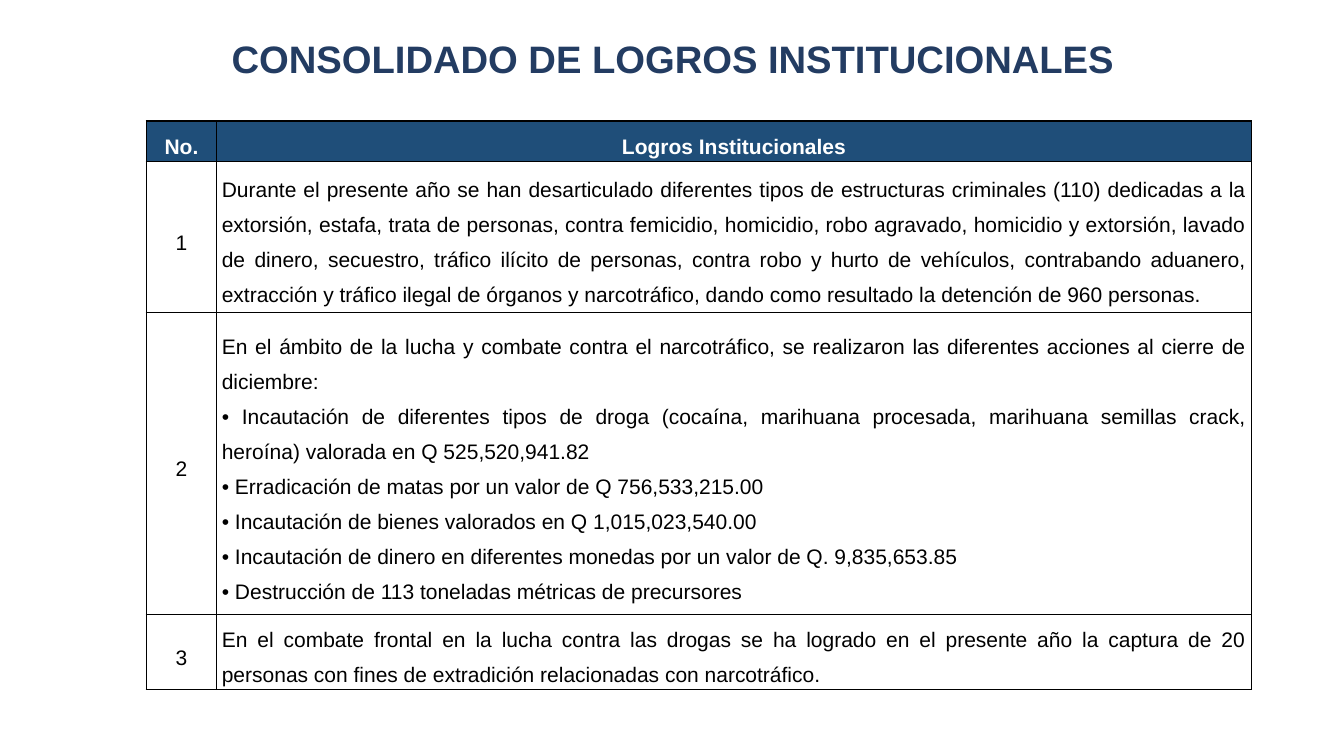
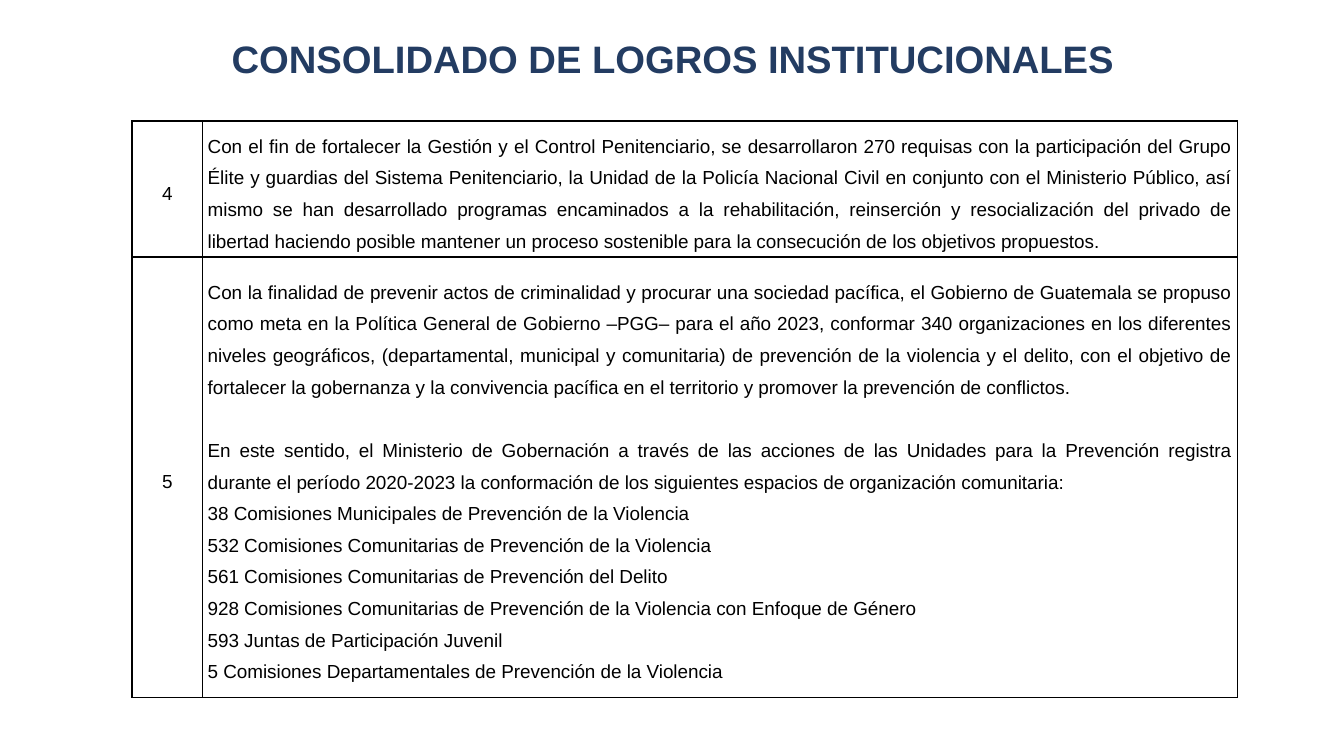
from dataclasses import dataclass

from pptx import Presentation
from pptx.dml.color import RGBColor
from pptx.enum.text import MSO_ANCHOR as ANCHOR, MSO_AUTO_SIZE as AUTO, PP_ALIGN as ALIGN
from pptx.oxml import parse_xml
from pptx.oxml.ns import nsdecls
from pptx.util import Inches, Pt


# Colours and type sizes
@dataclass(frozen=True)
class Theme:
    font: str = "Arial"
    title_color: str = "233C62"
    header_fill: str = "1F4E79"
    header_text: str = "FFFFFF"
    text: str = "000000"
    border: str = "000000"
    border_width: float = 1
    title_size: float = 27.3
    large_size: float = 15
    small_size: float = 13.5
    cell_spacing: float = 1.5
    block_gap: float = 23


class Deck:
    def __init__(self, theme):
        self.theme = theme
        self.prs = Presentation()
        self.prs.slide_width, self.prs.slide_height = Inches(13.33), Inches(7.5)
        self.s = None

    def add_run(self, p, text, size, color, bold=False):
        r = p.add_run()
        r.text = text
        f = r.font
        f.name, f.size, f.bold = self.theme.font, Pt(size), bold
        f.color.rgb = RGBColor.from_string(color)

    def add_slide(self, title):
        self.s = self.prs.slides.add_slide(self.prs.slide_layouts[5])
        sp = self.s.shapes.title
        sp.left, sp.top = Inches(2.04), Inches(0.24)
        sp.width, sp.height = Inches(9.26), Inches(0.73)
        tf = sp.text_frame
        tf.word_wrap, tf.auto_size = True, AUTO.NONE
        tf.vertical_anchor = ANCHOR.MIDDLE
        p = tf.paragraphs[0]
        p.alignment, p.line_spacing = ALIGN.CENTER, 0.9
        self.add_run(p, title, self.theme.title_size, self.theme.title_color, True)

    def add_borders(self, cell):
        tc_pr = cell._tc.get_or_add_tcPr()
        for side in "LRTB":
            tc_pr.append(parse_xml(
                f'<a:ln{side} {nsdecls("a")} w="{Pt(self.theme.border_width)}">'
                f'<a:solidFill><a:srgbClr val="{self.theme.border}"/></a:solidFill>'
                f'</a:ln{side}>'))

    def fill_cell(self, cell, blocks, size, align, header=False):
        """Each block is a list of paragraphs; a gap separates the blocks."""
        th = self.theme
        cell.margin_left = cell.margin_right = Inches(0.05)
        cell.margin_top = cell.margin_bottom = 0
        cell.vertical_anchor = ANCHOR.MIDDLE
        self.add_borders(cell)
        if header:
            cell.fill.solid()
            cell.fill.fore_color.rgb = RGBColor.from_string(th.header_fill)
        else:
            cell.fill.background()
        tf = cell.text_frame
        for b, block in enumerate(blocks):
            for i, text in enumerate(block):
                first = b == 0 and i == 0
                p = tf.paragraphs[0] if first else tf.add_paragraph()
                p.alignment, p.line_spacing = align, th.cell_spacing
                if b > 0 and i == 0:
                    p.space_before = Pt(th.block_gap)
                self.add_run(p, text, size, th.header_text if header else th.text, header)

    def add_table(self, left, heights, rows, size, header=None):
        all_rows = ([(header[0], [[header[1]]])] if header else []) + rows
        widths = (0.7, 10.26)
        table = self.s.shapes.add_table(
            len(all_rows), len(widths), Inches(left), Inches(1.2),
            Inches(sum(widths)), Inches(sum(heights))).table
        table.first_row, table.horz_banding = bool(header), False
        for col, width in zip(table.columns, widths):
            col.width = Inches(width)
        for i, (height, (number, blocks)) in enumerate(zip(heights, all_rows)):
            table.rows[i].height = Inches(height)
            is_header = bool(header) and i == 0
            self.fill_cell(table.cell(i, 0), [[number]], size, ALIGN.CENTER, is_header)
            self.fill_cell(table.cell(i, 1), blocks, size,
                           ALIGN.CENTER if is_header else ALIGN.JUSTIFY, is_header)


TITLE = "CONSOLIDADO DE LOGROS INSTITUCIONALES"

# Achievements 1 to 3
SECURITY = [
    ("1", [[
        "Durante el presente año se han desarticulado diferentes tipos de estructuras "
        "criminales (110) dedicadas a la extorsión, estafa, trata de personas, contra "
        "femicidio, homicidio, robo agravado, homicidio y extorsión, lavado de dinero, "
        "secuestro, tráfico ilícito de personas, contra robo y hurto de vehículos, "
        "contrabando aduanero, extracción y tráfico ilegal de órganos y narcotráfico, "
        "dando como resultado la detención de 960 personas."]]),
    ("2", [[
        "En el ámbito de la lucha y combate contra el narcotráfico, se realizaron las "
        "diferentes acciones al cierre de diciembre:",
        "• Incautación de diferentes tipos de droga (cocaína, marihuana procesada, "
        "marihuana semillas crack, heroína) valorada en Q 525,520,941.82",
        "• Erradicación de matas por un valor de Q 756,533,215.00",
        "• Incautación de bienes valorados en Q 1,015,023,540.00",
        "• Incautación de dinero en diferentes monedas por un valor de Q. 9,835,653.85",
        "• Destrucción de 113 toneladas métricas de precursores"]]),
    ("3", [[
        "En el combate frontal en la lucha contra las drogas se ha logrado en el presente "
        "año la captura de 20 personas con fines de extradición relacionadas con "
        "narcotráfico."]]),
]

# Achievements 4 and 5
PREVENTION = [
    ("4", [[
        "Con el fin de fortalecer la Gestión y el Control Penitenciario, se desarrollaron "
        "270 requisas con la participación del Grupo Élite y guardias del Sistema "
        "Penitenciario, la Unidad de la Policía Nacional Civil en conjunto con el "
        "Ministerio Público, así mismo se han desarrollado programas encaminados a la "
        "rehabilitación, reinserción y resocialización del privado de libertad haciendo "
        "posible mantener un proceso sostenible para la consecución de los objetivos "
        "propuestos."]]),
    ("5", [
        ["Con la finalidad de prevenir actos de criminalidad y procurar una sociedad "
         "pacífica, el Gobierno de Guatemala se propuso como meta en la Política General "
         "de Gobierno –PGG– para el año 2023, conformar 340 organizaciones en los "
         "diferentes niveles geográficos, (departamental, municipal y comunitaria) de "
         "prevención de la violencia y el delito, con el objetivo de fortalecer la "
         "gobernanza y la convivencia pacífica en el territorio y promover la prevención "
         "de conflictos."],
        ["En este sentido, el Ministerio de Gobernación a través de las acciones de las "
         "Unidades para la Prevención registra durante el período 2020-2023 la "
         "conformación de los siguientes espacios de organización comunitaria:",
         "38 Comisiones Municipales de Prevención de la Violencia",
         "532 Comisiones Comunitarias de Prevención de la Violencia",
         "561 Comisiones Comunitarias de Prevención del Delito",
         "928 Comisiones Comunitarias de Prevención de la Violencia con Enfoque de Género",
         "593 Juntas de Participación Juvenil",
         "5 Comisiones Departamentales de Prevención de la Violencia"]]),
]


def main():
    theme = Theme()
    deck = Deck(theme)

    # Slide 1: table with header
    deck.add_slide(TITLE)
    deck.add_table(1.45, (0.4, 1.5, 3, 0.74), SECURITY, theme.large_size,
                   header=("No.", "Logros Institucionales"))

    # Slide 2: table continued
    deck.add_slide(TITLE)
    deck.add_table(1.31, (1.35, 4.37), PREVENTION, theme.small_size)

    deck.prs.save("out.pptx")


if __name__ == "__main__":
    main()
